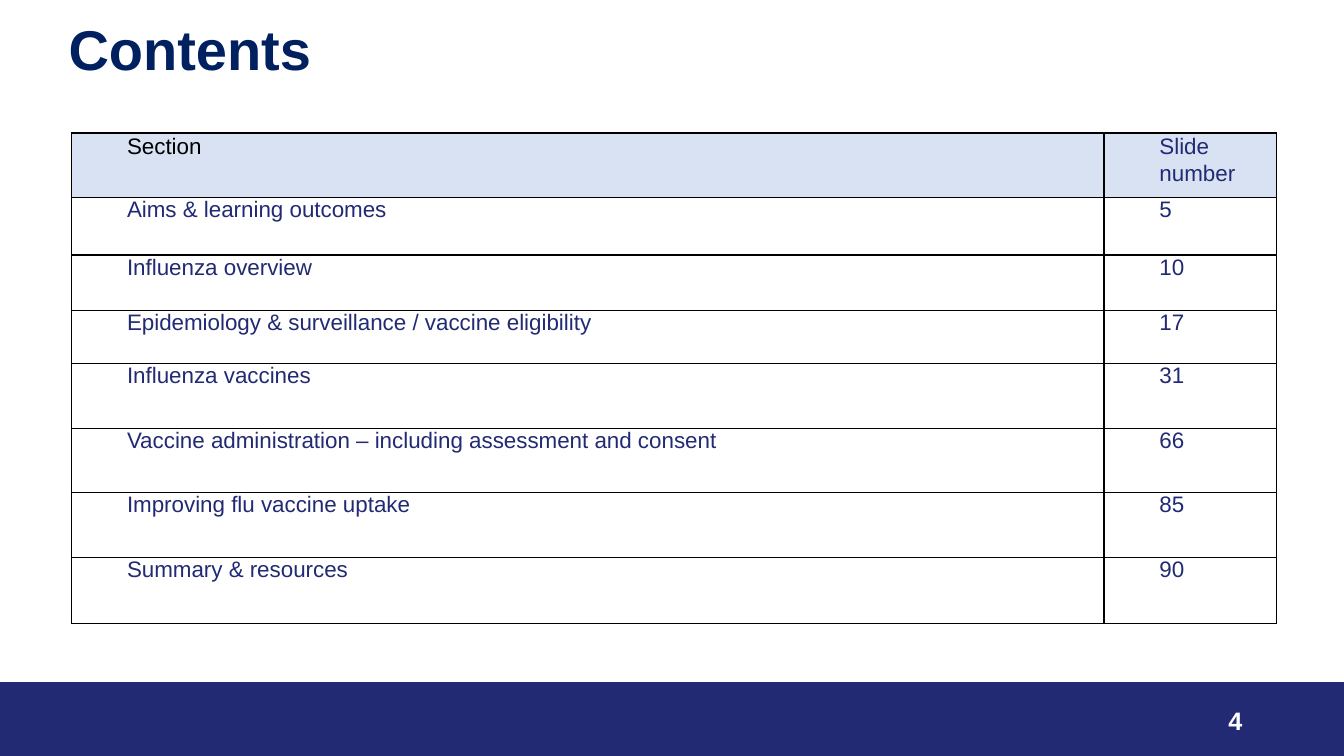
from dataclasses import dataclass

from lxml import etree
from pptx import Presentation
from pptx.dml.color import RGBColor
from pptx.enum import shapes, text
from pptx.oxml import ns
from pptx.util import Inches, Pt


@dataclass(frozen=True)
class Theme:
    font: str = "Arial"
    navy: str = "212A73"
    title: str = "002060"
    header: str = "D9E2F3"
    black: str = "000000"
    white: str = "FFFFFF"
    title_size: int = 40
    table_size: int = 16
    number_size: int = 18
    border_width: int = 1


THEME = Theme()

CONTENTS = [
    ("Section", "Slide number"),
    ("Aims & learning outcomes", "5"),
    ("Influenza overview", "10"),
    ("Epidemiology & surveillance / vaccine eligibility", "17"),
    ("Influenza vaccines", "31"),
    ("Vaccine administration – including assessment and consent", "66"),
    ("Improving flu vaccine uptake", "85"),
    ("Summary & resources", "90"),
]
COLUMN_WIDTHS = [10.24, 1.71]
ROW_HEIGHTS = [0.64, 0.57, 0.55, 0.53, 0.64, 0.64, 0.64, 0.66]


def inches(box):
    return [Inches(length) for length in box]


def style_font(paragraph, size, color, bold=False):
    font = paragraph.font
    font.name, font.size, font.bold = THEME.font, Pt(size), bold
    font.color.rgb = RGBColor.from_string(color)


def add_title(slide, box, title):
    shape = slide.shapes.title
    shape.left, shape.top, shape.width, shape.height = inches(box)
    frame = shape.text_frame
    frame.text = title
    frame.vertical_anchor = text.MSO_ANCHOR.TOP
    paragraph = frame.paragraphs[0]
    paragraph.alignment = text.PP_ALIGN.LEFT
    paragraph.line_spacing = 0.9
    style_font(paragraph, THEME.title_size, THEME.title, bold=True)


def add_borders(cell):
    properties = cell._tc.get_or_add_tcPr()
    # Border lines come before the fill in the cell properties
    for position, side in enumerate(("lnL", "lnR", "lnT", "lnB")):
        line = etree.Element(ns.qn(f"a:{side}"), w=str(Pt(THEME.border_width)))
        fill = etree.SubElement(line, ns.qn("a:solidFill"))
        etree.SubElement(fill, ns.qn("a:srgbClr"), val=THEME.black)
        properties.insert(position, line)


def fill_cell(cell, content, fill, color, line_spacing):
    cell.fill.solid()
    cell.fill.fore_color.rgb = RGBColor.from_string(fill)
    cell.margin_left = cell.margin_right = Inches(0.05)
    cell.margin_top = cell.margin_bottom = 0
    cell.text = content
    paragraph = cell.text_frame.paragraphs[0]
    paragraph.line_spacing = line_spacing
    paragraph._p.get_or_add_pPr().set("marL", str(Inches(0.5)))
    style_font(paragraph, THEME.table_size, color)
    add_borders(cell)


def add_contents_table(slide, box):
    frame = slide.shapes.add_table(len(CONTENTS), len(COLUMN_WIDTHS), *inches(box))
    table = frame.table
    table.first_row = table.horz_banding = False
    for column, width in zip(table.columns, COLUMN_WIDTHS):
        column.width = Inches(width)
    for row, height in zip(table.rows, ROW_HEIGHTS):
        row.height = Inches(height)
    for row_index, entries in enumerate(CONTENTS):
        is_header = row_index == 0
        for column_index, content in enumerate(entries):
            is_corner = is_header and column_index == 0
            fill_cell(
                table.cell(row_index, column_index),
                content,
                fill=THEME.header if is_header else THEME.white,
                color=THEME.black if is_corner else THEME.navy,
                line_spacing=1.07 if is_header else 1.0,
            )


def add_footer(slide, box, number):
    left, top, width, height = box
    # Full-width band
    band = slide.shapes.add_shape(shapes.MSO_SHAPE.RECTANGLE, *inches(box))
    band.shadow.inherit = False
    band.fill.solid()
    band.fill.fore_color.rgb = RGBColor.from_string(THEME.navy)
    band.line.color.rgb = RGBColor.from_string(THEME.navy)
    band.line.width = Pt(1)
    # Slide number
    number_box = (left + width - 3.91, top + 0.18, 3, 0.4)
    frame = slide.shapes.add_textbox(*inches(number_box)).text_frame
    frame.word_wrap = True
    frame.text = number
    paragraph = frame.paragraphs[0]
    paragraph.alignment = text.PP_ALIGN.RIGHT
    style_font(paragraph, THEME.number_size, THEME.white, bold=True)


def main():
    presentation = Presentation()
    presentation.slide_width = Inches(13.33)
    presentation.slide_height = Inches(7.5)
    title_only = presentation.slide_layouts[5]
    slide = presentation.slides.add_slide(title_only)
    add_footer(slide, (0, 6.77, 13.33, 0.73), "4")
    add_title(slide, (0.58, 0.17, 11.69, 1.45), "Contents")
    add_contents_table(slide, (0.71, 1.32, sum(COLUMN_WIDTHS), sum(ROW_HEIGHTS)))
    presentation.save("out.pptx")


if __name__ == "__main__":
    main()
